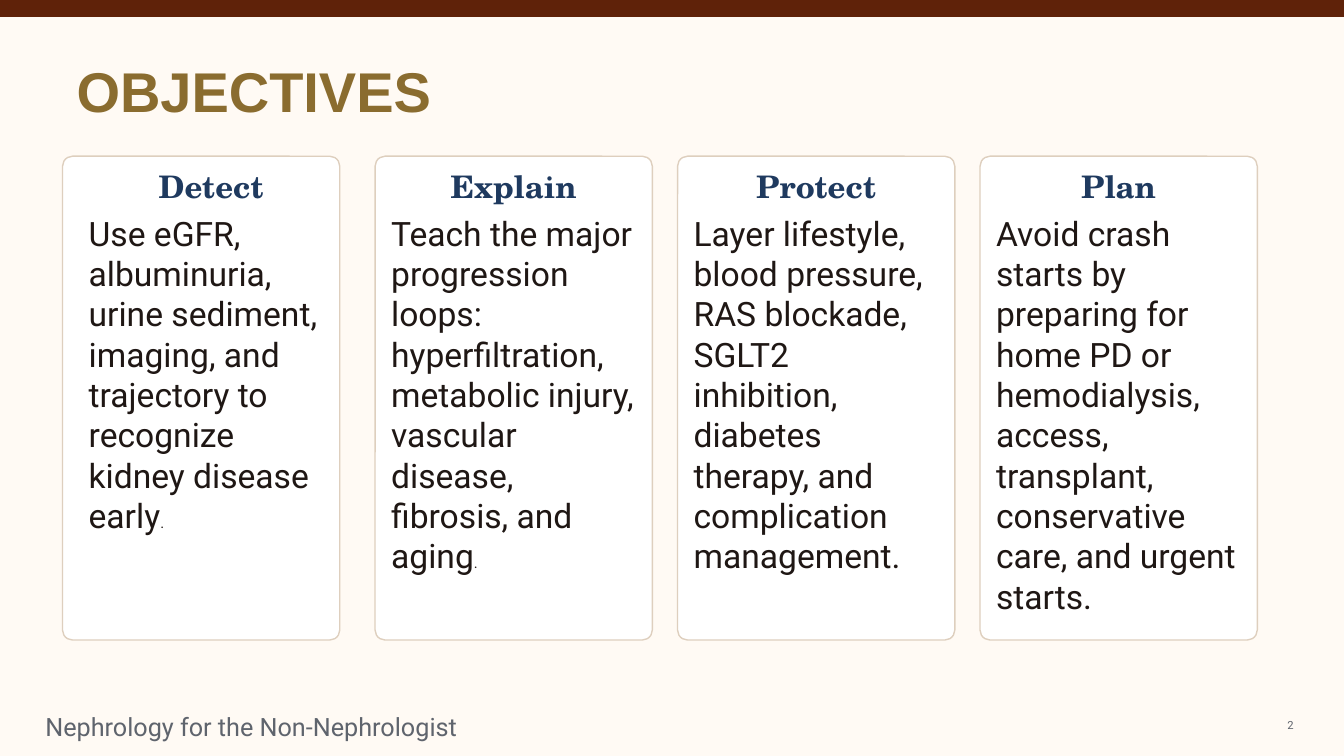
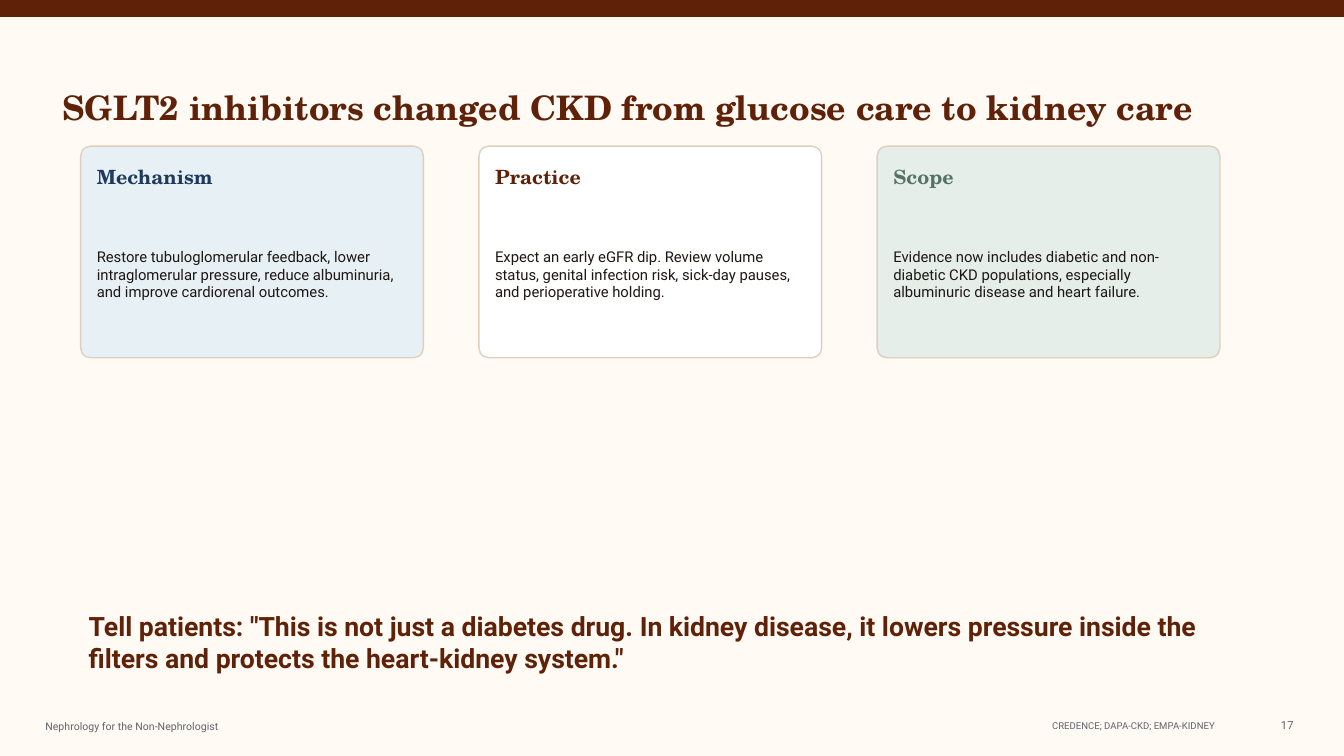
from dataclasses import dataclass

from pptx import Presentation
from pptx.dml.color import RGBColor
from pptx.enum import shapes, text
from pptx.slide import Slide
from pptx.util import Inches, Pt

# Shared colours and fonts
CREAM = RGBColor(0xFF, 0xFA, 0xF4)
BROWN = RGBColor(0x5F, 0x22, 0x09)
GOLD = RGBColor(0x8A, 0x6C, 0x2F)
NAVY = RGBColor(0x1F, 0x3A, 0x5F)
GREEN = RGBColor(0x55, 0x72, 0x67)
INK = RGBColor(0x1F, 0x17, 0x14)
GREY = RGBColor(0x5F, 0x64, 0x6D)
TAN = RGBColor(0xDE, 0xCF, 0xBE)
WHITE = RGBColor(0xFF, 0xFF, 0xFF)
ICE = RGBColor(0xE7, 0xF1, 0xF5)
MINT = RGBColor(0xE6, 0xEE, 0xE9)
SANS, SERIF, ARIAL = "Roboto", "TeX Gyre Schola", "Arial"

LEFT, CENTER, RIGHT = text.PP_ALIGN.LEFT, text.PP_ALIGN.CENTER, text.PP_ALIGN.RIGHT
TOP, MIDDLE = text.MSO_ANCHOR.TOP, text.MSO_ANCHOR.MIDDLE
WIDTH, HEIGHT = 13.33, 7.5
PAD = 0.16
RADIUS = 0.1


@dataclass(frozen=True)
class Box:
    left: float
    top: float
    width: float
    height: float


@dataclass(frozen=True)
class Style:
    size: float
    color: RGBColor
    font: str = SANS
    bold: bool = False
    align: text.PP_ALIGN = LEFT
    anchor: text.MSO_ANCHOR = MIDDLE


@dataclass(frozen=True)
class Card:
    head: str
    body: str
    fill: RGBColor = WHITE
    color: RGBColor = NAVY
    inset: float = PAD
    stop: str = ""  # closing mark set in small type


@dataclass(frozen=True)
class Look:
    """Type and spacing of one row of cards."""
    head: float
    body: float
    align: text.PP_ALIGN
    anchor: text.MSO_ANCHOR
    depth: float


def add_panel(slide: Slide, kind: shapes.MSO_SHAPE, box: Box,
              fill: RGBColor, edge: RGBColor) -> None:
    panel = slide.shapes.add_shape(kind, Inches(box.left), Inches(box.top),
                                   Inches(box.width), Inches(box.height))
    panel.shadow.inherit = False
    panel.fill.solid()
    panel.fill.fore_color.rgb = fill
    panel.line.color.rgb = edge
    panel.line.width = Pt(1)
    if kind == shapes.MSO_SHAPE.ROUNDED_RECTANGLE:
        panel.adjustments[0] = RADIUS / min(box.width, box.height)


def add_text(slide: Slide, box: Box, words: str, style: Style, stop: str = "") -> None:
    label = slide.shapes.add_textbox(Inches(box.left), Inches(box.top),
                                     Inches(box.width), Inches(box.height))
    frame = label.text_frame
    frame.word_wrap = True
    frame.vertical_anchor = style.anchor
    frame.margin_left = frame.margin_right = 0
    frame.margin_top = frame.margin_bottom = 0
    frame.text = words
    line = frame.paragraphs[0]
    line.alignment = style.align
    if stop:
        line.add_run().text = stop
    for run in line.runs:
        run.font.size = Pt(style.size)
        run.font.name = style.font
        run.font.bold = style.bold
        run.font.color.rgb = style.color
    if stop:
        line.runs[-1].font.size = Pt(10.6)


def add_card(slide: Slide, box: Box, card: Card, look: Look) -> None:
    add_panel(slide, shapes.MSO_SHAPE.ROUNDED_RECTANGLE, box, card.fill, TAN)
    left = box.left + card.inset
    width = box.width - card.inset - PAD
    if card.inset > PAD:
        width = box.width - 2 * PAD
    add_text(slide, Box(left, box.top + 0.14, width, 0.32), card.head,
             Style(look.head, card.color, SERIF, True, look.align))
    add_text(slide, Box(left, box.top + 0.56, width, look.depth), card.body,
             Style(look.body, INK, anchor=look.anchor), card.stop)


def add_page(deck: Presentation, title: str, spot: Box, style: Style,
             number: int, foot: float) -> Slide:
    """Blank slide with the top band, title, footer and page number."""
    slide = deck.slides.add_slide(deck.slide_layouts[6])
    add_panel(slide, shapes.MSO_SHAPE.RECTANGLE, Box(0, 0, WIDTH, 0.16), BROWN, BROWN)
    add_text(slide, spot, title, style)
    add_text(slide, Box(0.45, 7.12, 4.3, 0.18),
             "Nephrology for the Non-Nephrologist", Style(foot, GREY))
    add_text(slide, Box(12.28, 7.1, 0.55, 0.18), str(number),
             Style(8, GREY, align=RIGHT))
    return slide


GOALS = [
    Card("Detect", "Use eGFR, albuminuria, urine sediment, imaging, and trajectory "
         "to recognize kidney disease early", inset=0.26, stop="."),
    Card("Explain", "Teach the major progression loops: hyperfiltration, metabolic "
         "injury, vascular disease, fibrosis, and aging", stop="."),
    Card("Protect", "Layer lifestyle, blood pressure, RAS blockade, SGLT2 inhibition, "
         "diabetes therapy, and complication management."),
    Card("Plan", "Avoid crash starts by preparing for home PD or hemodialysis, access, "
         "transplant, conservative care, and urgent starts."),
]

THEMES = [
    Card("Mechanism", "Restore tubuloglomerular feedback, lower intraglomerular "
         "pressure, reduce albuminuria, and improve cardiorenal outcomes.", ICE),
    Card("Practice", "Expect an early eGFR dip. Review volume status, genital infection "
         "risk, sick-day pauses, and perioperative holding.", WHITE, BROWN),
    Card("Scope", "Evidence now includes diabetic and non-diabetic CKD populations, "
         "especially albuminuric disease and heart failure.", MINT, GREEN),
]


def add_goals(deck: Presentation) -> None:
    slide = add_page(deck, "OBJECTIVES", Box(0.76, 0.78, 6.5, 0.22),
                     Style(40, GOLD, ARIAL, True), 2, 18)
    look = Look(22.2, 24, CENTER, TOP, 4.08)
    for i, card in enumerate(GOALS):
        # The first card sits a little further left than the even grid
        left = 0.72 + 3 * i - (card.inset - PAD)
        add_card(slide, Box(left, 1.55, 2.75, 4.8), card, look)


def add_themes(deck: Presentation) -> None:
    slide = add_page(deck, "SGLT2 inhibitors changed CKD from glucose care to kidney care",
                     Box(0.62, 0.75, 11.4, 0.62), Style(24.1, BROWN, SERIF, True), 17, 7.5)
    add_text(slide, Box(5.2, 7.1, 6.85, 0.2), "CREDENCE; DAPA-CKD; EMPA-KIDNEY",
             Style(6.8, GREY, align=RIGHT))
    look = Look(14, 10.6, LEFT, MIDDLE, 1.42)
    for i, card in enumerate(THEMES):
        add_card(slide, Box(0.8 + 3.95 * i, 1.45, 3.4, 2.1), card, look)
    # Message for patients
    add_text(slide, Box(0.88, 6.05, 11.4, 0.7),
             'Tell patients: "This is not just a diabetes drug. In kidney disease, it lowers '
             'pressure inside the filters and protects the heart-kidney system."',
             Style(19, BROWN, bold=True, anchor=TOP))


def main() -> None:
    deck = Presentation()
    deck.slide_width, deck.slide_height = Inches(WIDTH), Inches(HEIGHT)
    back = deck.slide_master.background.fill
    back.solid()
    back.fore_color.rgb = CREAM
    add_goals(deck)
    add_themes(deck)
    deck.save("out.pptx")


if __name__ == "__main__":
    main()
